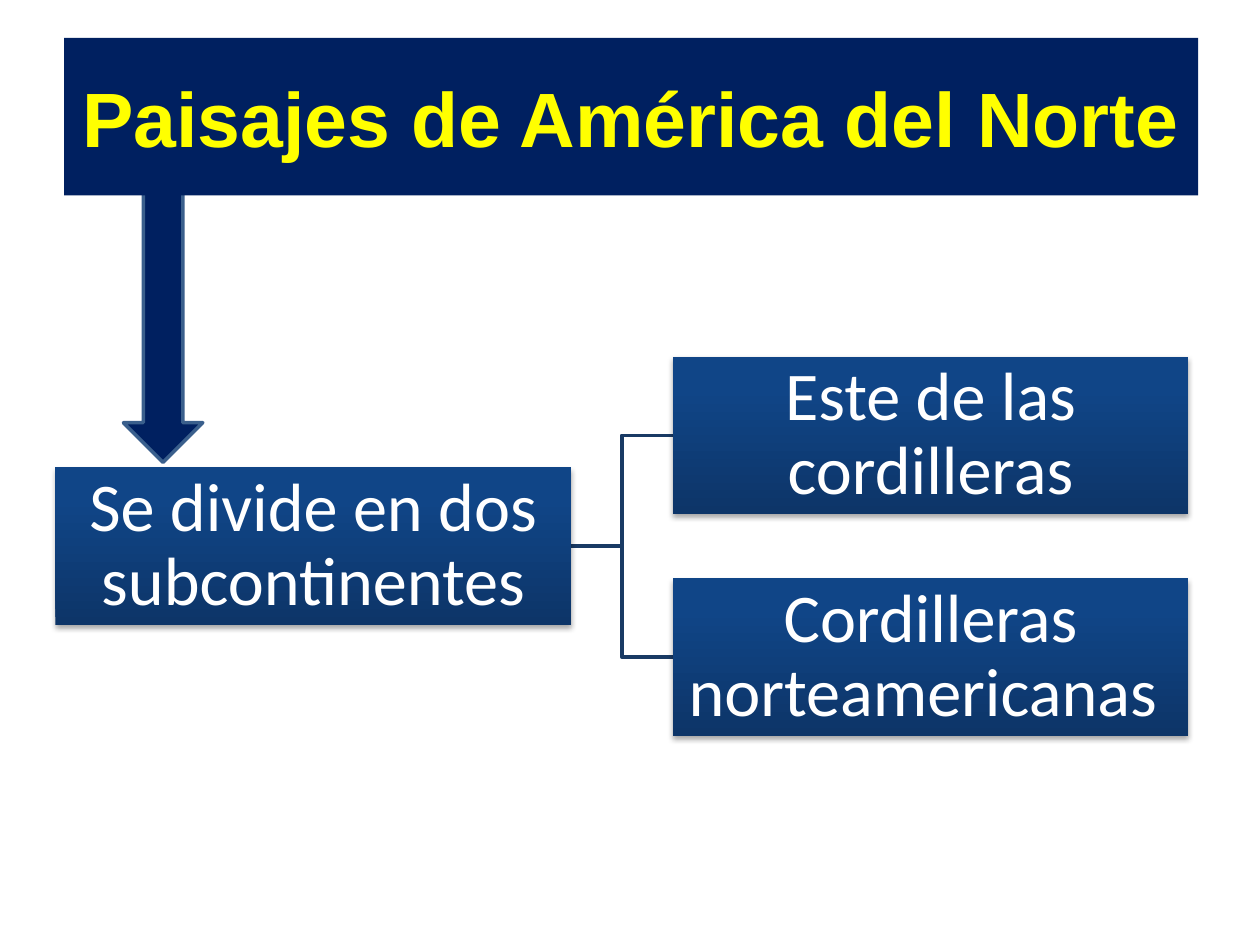
from dataclasses import dataclass

from lxml.etree import SubElement
from pptx import Presentation
from pptx.dml.color import RGBColor
from pptx.enum.shapes import MSO_SHAPE
from pptx.enum.text import MSO_ANCHOR, PP_ALIGN
from pptx.oxml.ns import qn
from pptx.util import Inches, Pt


@dataclass(frozen=True)
class Theme:
    navy: str = "002060"
    edge: str = "3A5F8C"
    link: str = "193A64"
    yellow: str = "FFFF00"
    white: str = "FFFFFF"
    shade: str = "000000"
    blend: tuple = ((0, "0D3568"), (80, "104587"), (100, "0E458A"))
    head: int = 44
    body: int = 39
    line: int = 2


def put(item, form):
    for name, value in form.items():
        setattr(item, name, value)


def node(parent, tag, **attrs):
    return SubElement(parent, qn(tag), {k: str(v) for k, v in attrs.items()})


class Deck:
    def __init__(self, theme):
        self.theme = theme
        self.file = Presentation()
        put(self.file, {"slide_width": Inches(10), "slide_height": Inches(7.5)})
        self.slide = self.file.slides.add_slide(self.file.slide_layouts[6])

    def shape(self, kind, box, fill=None, line=None):
        item = self.slide.shapes.add_shape(kind, *map(Inches, box))
        item.shadow.inherit = False
        if fill:
            item.fill.solid()
            item.fill.fore_color.rgb = RGBColor.from_string(fill)
        self.stroke(item, line)
        return item

    def stroke(self, item, color):
        if color:
            item.line.color.rgb = RGBColor.from_string(color)
            item.line.width = Pt(self.theme.line)
        else:
            item.line.fill.background()

    def label(self, item, text, pad, gap, color, **font):
        frame = item.text_frame
        sides = ("left", "right", "top", "bottom")
        put(frame, {f"margin_{side}": Inches(pad) for side in sides})
        put(frame, {"word_wrap": True, "vertical_anchor": MSO_ANCHOR.MIDDLE})
        para = frame.paragraphs[0]
        put(para, {"alignment": PP_ALIGN.CENTER, "line_spacing": gap})
        run = para.add_run()
        run.text = text
        run.font.color.rgb = RGBColor.from_string(color)
        put(run.font, font)

    def title(self, text, box):
        item = self.shape(MSO_SHAPE.RECTANGLE, box, self.theme.navy)
        self.label(item, text, 0.1, 1.0, self.theme.yellow,
                   name="Arial", bold=True, size=Pt(self.theme.head))

    def arrow(self, box):
        self.shape(MSO_SHAPE.DOWN_ARROW, box, self.theme.navy, self.theme.edge)

    def card(self, text, box):
        item = self.shape(MSO_SHAPE.RECTANGLE, box)
        self.blend(item)
        self.shade(item)
        self.label(item, text, 0.03, 0.9, self.theme.white,
                   name="Calibri", size=Pt(self.theme.body))

    def blend(self, item):
        item.fill.gradient()
        item.fill.gradient_angle = 90
        stops = item._element.spPr.find(".//" + qn("a:gsLst"))
        for old in list(stops):
            stops.remove(old)
        for place, color in self.theme.blend:
            stop = node(stops, "a:gs", pos=place * 1000)
            node(stop, "a:srgbClr", val=color)

    def shade(self, item):
        effect = item._element.spPr.find(qn("a:effectLst"))
        drop = node(effect, "a:outerShdw", blurRad=Pt(3.1), dist=Pt(1.8),
                    dir=90 * 60000, rotWithShape=0)
        color = node(drop, "a:srgbClr", val=self.theme.shade)
        node(color, "a:alpha", val=35000)

    def elbow(self, start, end):
        (x1, y1), (x2, y2) = start, end
        mid = (x1 + x2) / 2
        pen = self.slide.shapes.build_freeform(Inches(x1), Inches(y1))
        points = [(mid, y1), (mid, y2), (x2, y2)]
        pen.add_line_segments([(Inches(x), Inches(y)) for x, y in points], close=False)
        item = pen.convert_to_shape()
        item.shadow.inherit = False
        item.fill.background()
        self.stroke(item, self.theme.link)


def main():
    deck = Deck(Theme())

    # Heading and the arrow below it
    deck.arrow((0.98, 1.23, 0.63, 2.44))
    deck.title("Paisajes de América del Norte", (0.51, 0.3, 9, 1.25))

    # Tree: one root, branches evenly above and below its middle
    wide, high, step = 4.09, 1.25, 1.76
    left, right, top = 0.44, 5.34, 3.71
    root = (left + wide, top + high / 2)
    names = ["Este de las cordilleras", "Cordilleras norteamericanas "]
    first = top - step * (len(names) - 1) / 2
    tops = [first + step * i for i in range(len(names))]

    # Links lie behind the cards
    for y in tops:
        deck.elbow(root, (right, y + high / 2))
    deck.card("Se divide en dos subcontinentes", (left, top, wide, high))
    for name, y in zip(names, tops):
        deck.card(name, (right, y, wide, high))

    deck.file.save("out.pptx")


if __name__ == "__main__":
    main()
